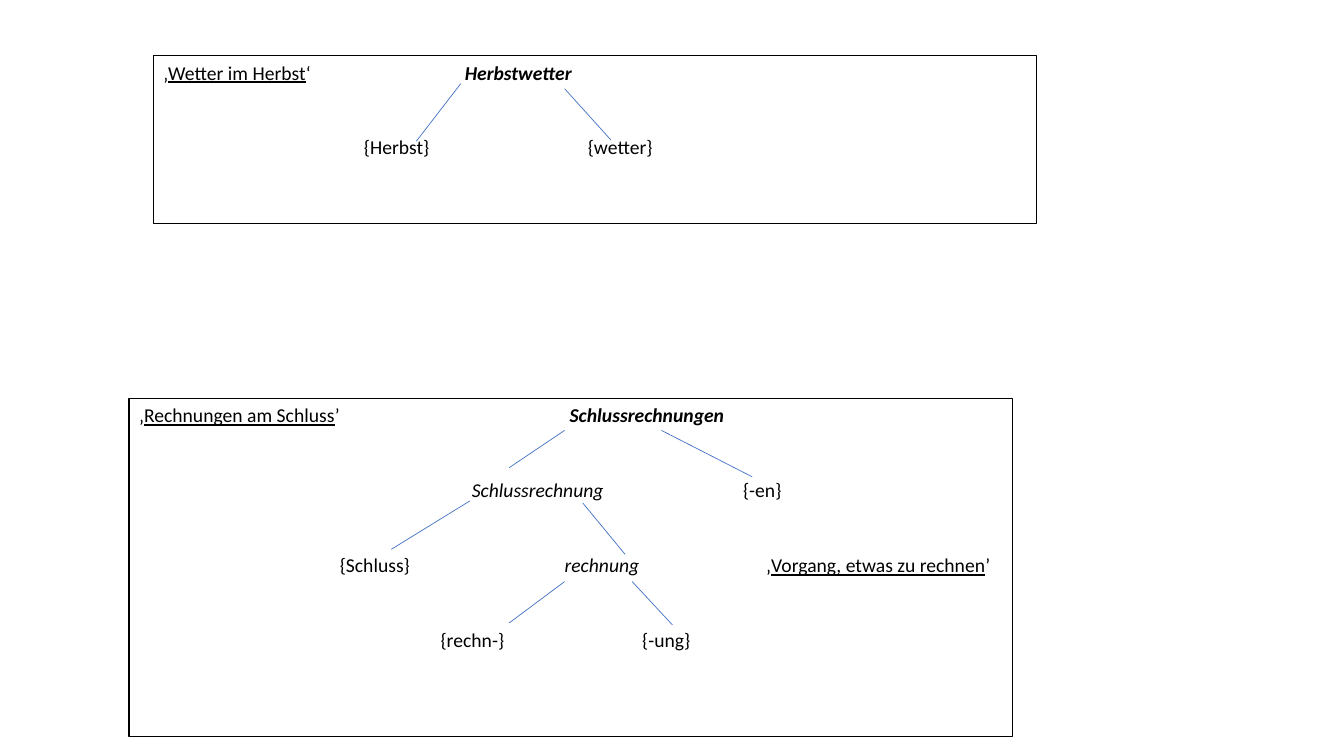
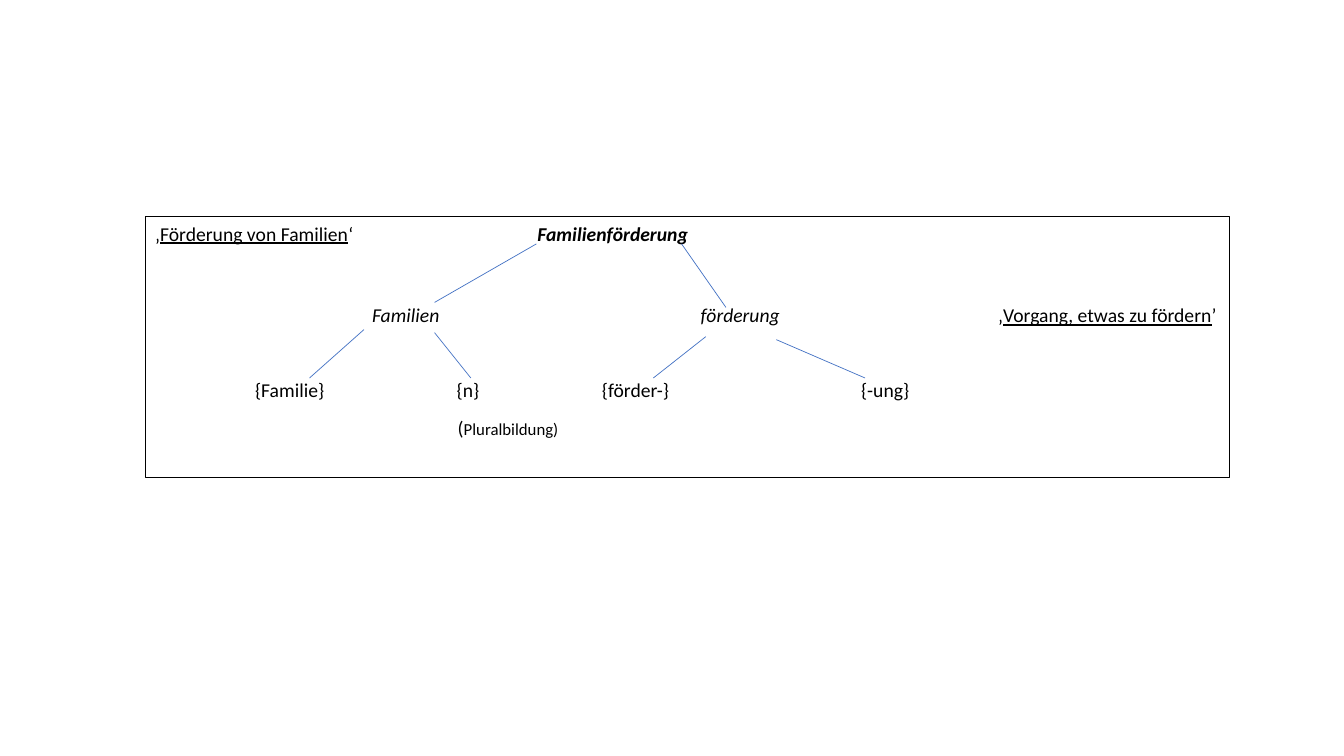
from pptx import Presentation
from pptx.dml.color import RGBColor
from pptx.enum.shapes import MSO_CONNECTOR, MSO_SHAPE
from pptx.enum.text import MSO_ANCHOR
from pptx.oxml.ns import qn
from pptx.util import Emu, Pt
from lxml.etree import SubElement

SCALE = 9144
FONT = "Calibri"
INK = "000000"
PAPER = "FFFFFF"
BRANCH = "4472C4"
PAD_X, PAD_Y = 10, 5
LABEL_WIDTH, LABEL_HEIGHT = 240, 24
ROMAN = {}
ITALIC = {"italic": True}
HEAD = {"bold": True, "italic": True}
SMALL = {"size": 12}


def px(length):
    return Emu(length * SCALE)


def color(hex_string):
    return RGBColor.from_string(hex_string)


def add_text(paragraph, text, size=14, bold=False, italic=False, underline=False):
    run = paragraph.add_run()
    run.text = text
    font = run.font
    font.name = FONT
    font.size = Pt(size)
    font.bold = bold
    font.italic = italic
    font.underline = underline
    font.color.rgb = color(INK)


def add_label(slide, left, top, *pieces):
    label = slide.shapes.add_textbox(px(left), px(top), px(LABEL_WIDTH), px(LABEL_HEIGHT))
    frame = label.text_frame
    frame.word_wrap = True
    frame.vertical_anchor = MSO_ANCHOR.TOP
    frame.margin_left = frame.margin_right = frame.margin_top = frame.margin_bottom = 0
    for text, style in pieces:
        add_text(frame.paragraphs[0], text, **style)


def add_gloss(slide, left, top, meaning, closing="’"):
    add_label(slide, left, top, ("‚", ROMAN), (meaning, {"underline": True}), (closing, ROMAN))


def add_panel(slide, left, top, width, height):
    panel = slide.shapes.add_shape(MSO_SHAPE.RECTANGLE, px(left), px(top), px(width), px(height))
    panel.shadow.inherit = False
    panel.fill.solid()
    panel.fill.fore_color.rgb = color(PAPER)
    panel.line.color.rgb = color(INK)
    panel.line.width = Pt(0.75)


def add_branch(slide, *ends):
    branch = slide.shapes.add_connector(MSO_CONNECTOR.STRAIGHT, *map(px, ends))
    branch.line.color.rgb = color(BRANCH)
    branch.line.width = Pt(0.5)
    SubElement(branch.element.spPr, qn("a:effectLst"))


def add_tree(slide, panel, rows, meaning, closing, words, branches, process=None):
    add_panel(slide, *panel)
    left, top = panel[0] + PAD_X, panel[1] + PAD_Y
    add_gloss(slide, left, top, meaning, closing)
    for row, word_left, text, style in words:
        add_label(slide, word_left, top + rows[row], (text, style))
    if process:
        row, process_left, process_meaning = process
        add_gloss(slide, process_left, top + rows[row], process_meaning)
    for ends in branches:
        add_branch(slide, *ends)


def add_compounds(slide):
    rows = (0, 74, 149, 223)
    add_tree(
        slide, (128, 395, 876, 336), rows, "Rechnungen am Schluss", "’",
        words=[
            (0, 565, "Schlussrechnungen", HEAD),
            (1, 468, "Schlussrechnung", ITALIC),
            (1, 737, "{-en}", ROMAN),
            (2, 337, "{Schluss}", ROMAN),
            (2, 560, "rechnung", ITALIC),
            (3, 437, "{rechn-}", ROMAN),
            (3, 637, "{-ung}", ROMAN),
        ],
        branches=[
            (560, 427, 505, 464), (656, 427, 746, 473),
            (466, 497, 388, 545), (578, 499, 620, 550),
            (560, 577, 505, 618), (627, 577, 667, 620),
        ],
        process=(2, 760, "Vorgang, etwas zu rechnen"),
    )
    add_tree(
        slide, (152, 55, 876, 167), rows, "Wetter im Herbst", "‘",
        words=[
            (0, 461, "Herbstwetter", HEAD),
            (1, 361, "{Herbst}", ROMAN),
            (1, 583, "{wetter}", ROMAN),
        ],
        branches=[(457, 83, 413, 140), (560, 88, 606, 139)],
    )


def add_family_support(slide):
    panel = (144, 215, 1075, 259)
    rows = (0, 81, 155, 193)
    add_tree(
        slide, panel, rows, "Förderung von Familien", "‘",
        words=[
            (0, 533, "Familienförderung", HEAD),
            (1, 369, "Familien", ITALIC),
            (1, 695, "förderung", ITALIC),
            (2, 253, "{Familie}", ROMAN),
            (2, 453, "{n}", ROMAN),
            (2, 597, "{förder-}", ROMAN),
            (2, 854, "{-ung}", ROMAN),
        ],
        branches=[
            (532, 242, 431, 300), (676, 242, 720, 305),
            (361, 327, 307, 375), (431, 330, 467, 375),
            (700, 334, 648, 375), (770, 337, 858, 375),
        ],
        process=(1, 990, "Vorgang, etwas zu fördern"),
    )
    add_label(slide, 454, panel[1] + PAD_Y + rows[3], ("(", ROMAN), ("Pluralbildung)", SMALL))


def main():
    presentation = Presentation()
    presentation.slide_width = px(1333)
    presentation.slide_height = px(750)
    blank = presentation.slide_layouts[6]
    for build in (add_compounds, add_family_support):
        build(presentation.slides.add_slide(blank))
    presentation.save("out.pptx")


if __name__ == "__main__":
    main()
